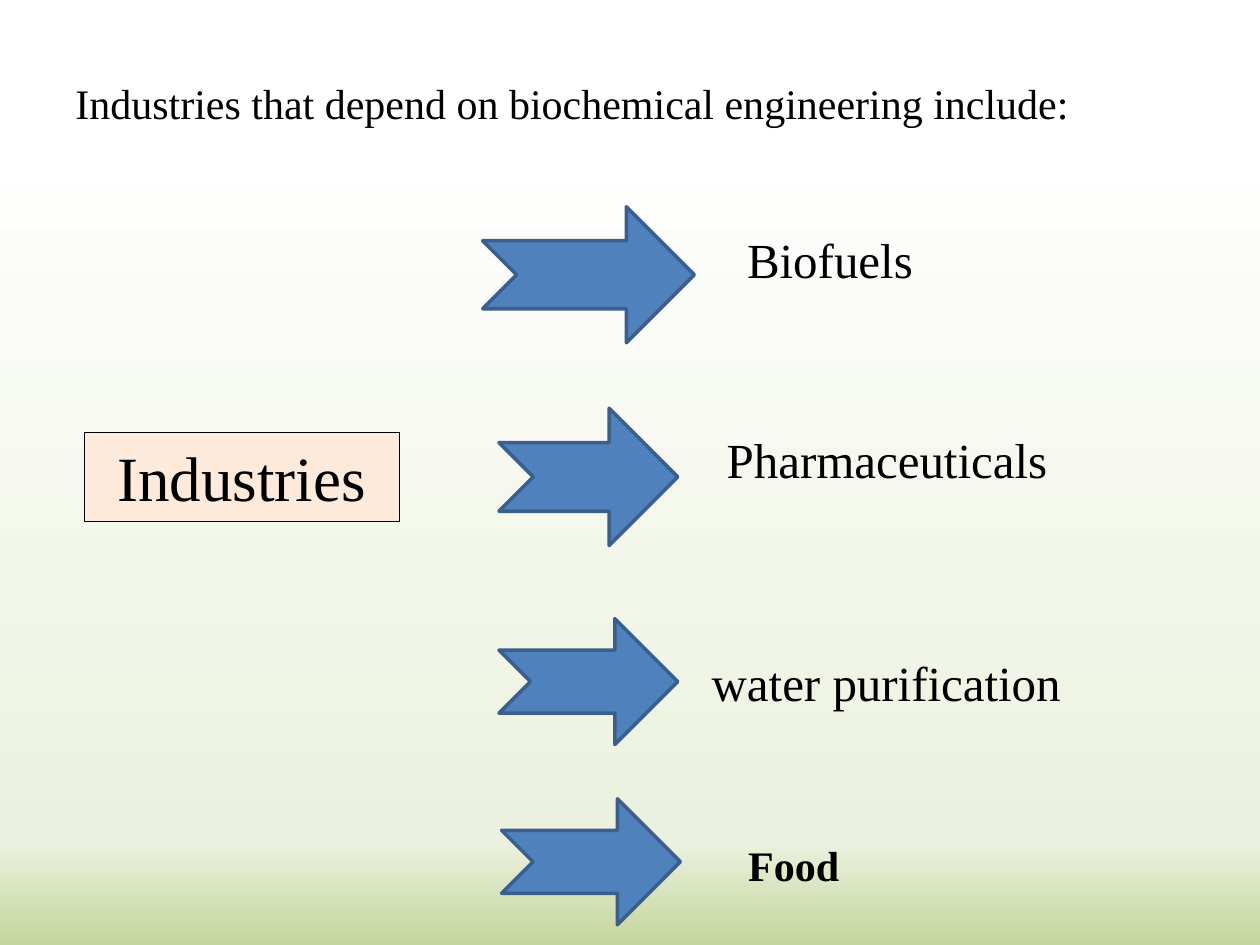
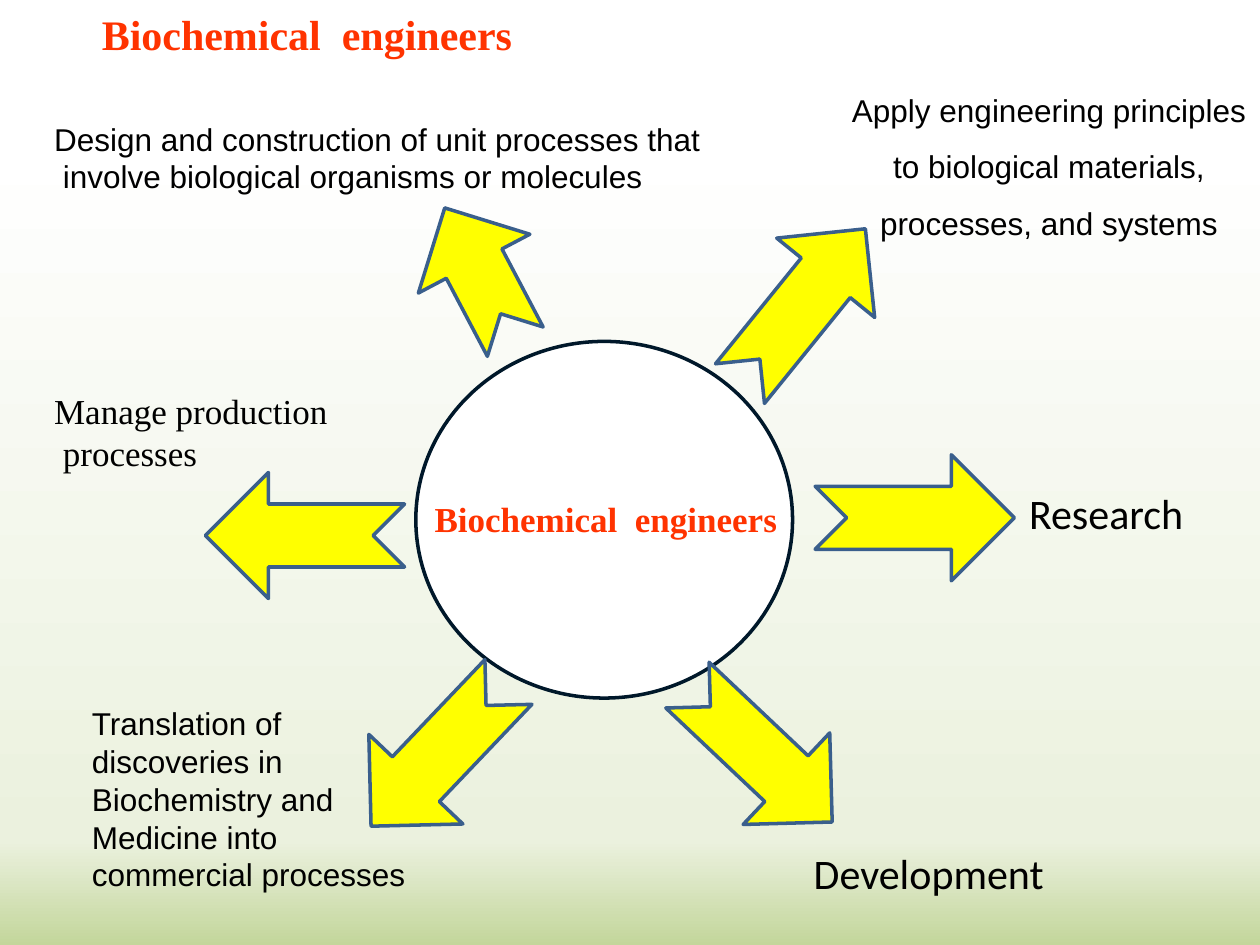
from copy import deepcopy

from pptx import Presentation
from pptx.dml.color import RGBColor
from pptx.enum import shapes, text
from pptx.oxml.ns import qn
from pptx.util import Pt

SHAPE = shapes.MSO_SHAPE
ALIGN = text.PP_ALIGN
SERIF, SANS, BODY = "Times New Roman", "Arial", "Calibri"
BLACK, WHITE, RED = "000000", "FFFFFF", "FF3300"
BLUE, YELLOW, EDGE = "4F81BD", "FFFF00", "3A5F8C"
BACKGROUND_STOPS = [(0.15, WHITE), (0.89, "EBF1DE"), (1, "C3D69B")]


def rgb(value):
    return RGBColor.from_string(value)


def add_slide(prs):
    """Add a blank slide with the shared white-to-green background."""
    s = prs.slides.add_slide(prs.slide_layouts[6])
    fill = s.background.fill
    fill.gradient()
    fill.gradient_angle = 270
    stop_list = next(s.background._cSld.iter(qn("a:gsLst")))
    stop_list.append(deepcopy(stop_list[0]))
    for stop, (position, color) in zip(fill.gradient_stops, BACKGROUND_STOPS):
        stop.position = position
        stop.color.rgb = rgb(color)
    return s


def write(sp, lines, size=18, font=SERIF, color=BLACK, bold=False,
          align=ALIGN.LEFT, spacing=None, wrap=True):
    """Fill a shape with one paragraph for each line of text."""
    tf = sp.text_frame
    tf.word_wrap = wrap
    tf.vertical_anchor = text.MSO_ANCHOR.TOP
    for i, line in enumerate(lines.split("\n")):
        p = tf.add_paragraph() if i else tf.paragraphs[0]
        p.alignment = align
        if spacing:
            p.line_spacing = spacing
        r = p.add_run()
        r.text = line
        r.font.size = Pt(size)
        r.font.name = font
        r.font.bold = bold
        r.font.color.rgb = rgb(color)


def add_text(s, box, lines, **style):
    write(s.shapes.add_textbox(*map(Pt, box)), lines, **style)


def add_shape(s, kind, box, fill, line, width=2):
    sp = s.shapes.add_shape(kind, *map(Pt, box))
    sp.shadow.inherit = False
    sp.fill.solid()
    sp.fill.fore_color.rgb = rgb(fill)
    sp.line.color.rgb = rgb(line)
    sp.line.width = Pt(width)
    return sp


def add_arrow(s, box, fill, rotation=0):
    sp = add_shape(s, SHAPE.NOTCHED_RIGHT_ARROW, box, fill, EDGE)
    sp.rotation = rotation


def build_industries(prs):
    s = add_slide(prs)
    add_text(s, (36, 41, 666, 66),
             "Industries that depend on biochemical engineering include:",
             size=24, align=ALIGN.JUSTIFY)

    large = dict(size=28)
    industries = [
        ((275.8, 118.1, 121, 77.8), (419.8, 127.4, 198, 41), "Biofuels", large),
        ((285.1, 233.3, 102.2, 78.5), (408.2, 241.9, 234, 41), "Pharmaceuticals", large),
        ((285.1, 353.5, 102.2, 72), (399.6, 369.4, 223.2, 41), "water purification",
         dict(size=28, wrap=False)),
        ((286.6, 456.5, 102.2, 72), (420.5, 475.9, 67, 36), "Food",
         dict(size=24, bold=True, wrap=False)),
    ]
    for arrow, label, name, style in industries:
        add_arrow(s, arrow, BLUE)
        add_text(s, label, name, **style)

    source = add_shape(s, SHAPE.RECTANGLE, (48.2, 247, 180, 51.1),
                       "FDEADA", BLACK, 0.75)
    write(source, "Industries", size=36, align=ALIGN.CENTER)


def build_engineers(prs):
    s = add_slide(prs)
    heading = dict(color=RED, bold=True, wrap=False)
    add_text(s, (51.1, 1.4, 257, 36), "Biochemical  engineers", size=24, **heading)
    add_shape(s, SHAPE.OVAL, (237.6, 195.1, 215.3, 203.8), WHITE, "00182A")
    add_text(s, (241.2, 280.8, 216.7, 31.7), "Biochemical  engineers",
             size=20, **heading)

    short = dict(size=24, font=BODY, wrap=False)
    roles = [
        ((465.8, 259.9, 113.8, 72), 0, (581, 275, 105.1, 36), "Research", short),
        ((377.3, 394.6, 113.8, 72), 43.4, (457.9, 481, 150.5, 36),
         "Development", short),
        ((231.1, 121, 86.4, 72), 242.2, (23.8, 64.8, 387.4, 74.9),
         "Design and construction of unit processes that\n"
         " involve biological organisms or molecules",
         dict(font=SANS, wrap=False)),
        ((117.4, 270, 113.8, 72), 180, (23.8, 218.9, 185.8, 55.4),
         "Manage production\n processes", dict(size=20)),
        ((401.8, 139, 113.8, 72), 309, (478.8, 37.4, 241.2, 101.5),
         "Apply engineering principles to biological materials, "
         "processes, and systems",
         dict(font=SANS, align=ALIGN.CENTER, spacing=1.5)),
        ((194.4, 393.8, 113.8, 74.2), 133.6, (45.4, 398.9, 208.1, 116.6),
         "Translation of discoveries in Biochemistry and Medicine into "
         "commercial processes", dict(font=SANS)),
    ]
    for arrow, rotation, label, role, style in roles:
        add_arrow(s, arrow, YELLOW, rotation)
        add_text(s, label, role, **style)


def main():
    prs = Presentation()
    prs.slide_width, prs.slide_height = Pt(720), Pt(540)
    build_industries(prs)
    build_engineers(prs)
    prs.save("out.pptx")


if __name__ == "__main__":
    main()
